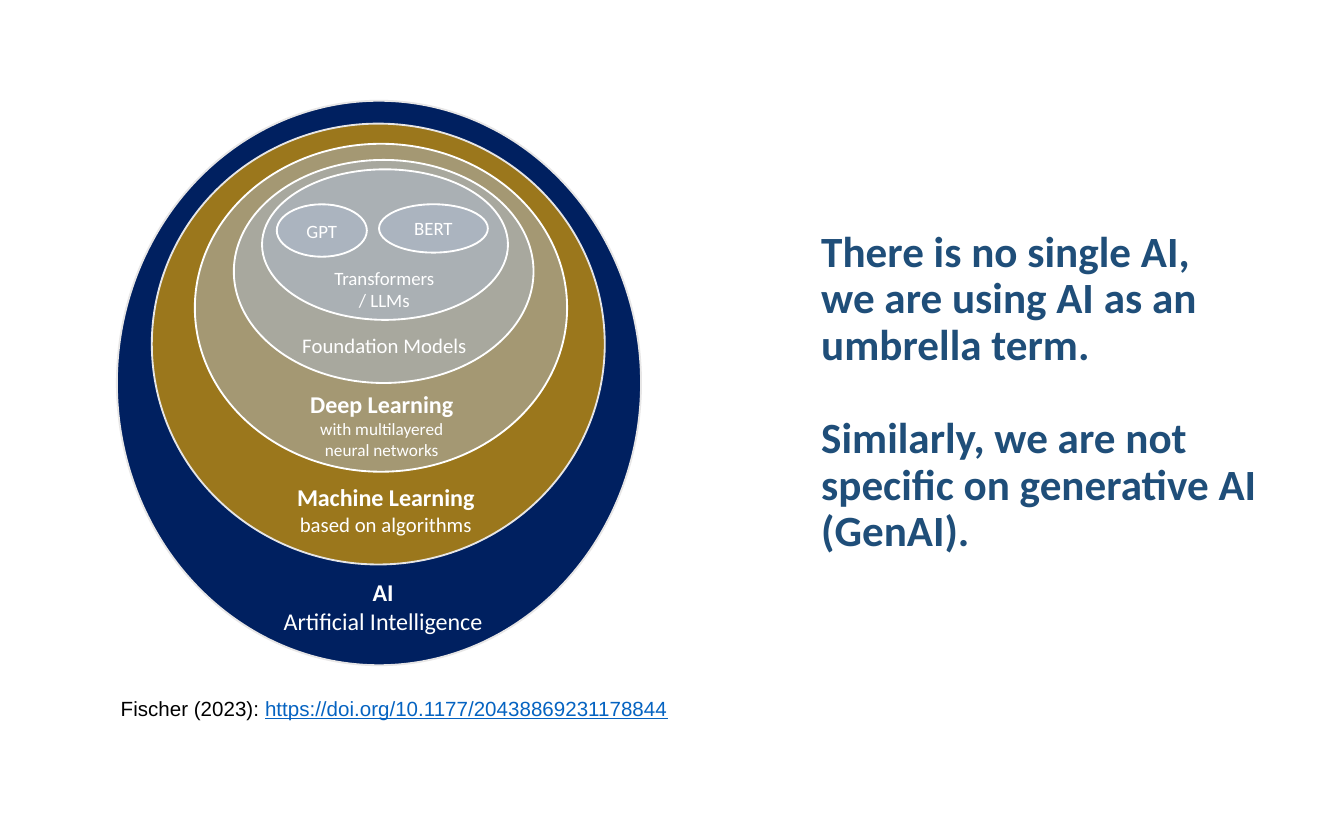
from lxml.etree import SubElement
from pptx import Presentation
from pptx.dml.color import RGBColor
from pptx.enum.shapes import MSO_SHAPE
from pptx.enum.text import MSO_ANCHOR, MSO_AUTO_SIZE, PP_ALIGN
from pptx.oxml.ns import qn
from pptx.util import Emu, Pt

PX = 9144  # 100 px to the inch
COLORS = {
    "navy": "002060", "gold": "DD9D00", "mist": "ADB9CA", "white": "FFFFFF",
    "pale": "E7E6E6", "heading": "1F4E79", "black": "000000", "link": "0563C1",
}

# left, top, width, height, fill, opacity in percent, line, text
ELLIPSES = [
    (0, 0, 390, 420, "navy", 100, "pale", ""),
    (26, 17, 337, 328, "gold", 70, "pale", ""),
    (58, 32, 277, 244, "mist", 50, "white", ""),
    (87, 44, 223, 166, "mist", 50, "white", ""),
    (108, 51, 183, 112, "mist", 50, "white", ""),
    (119, 77, 67, 39, "mist", 50, "white", "GPT"),
    (195, 77, 81, 36, "mist", 50, "white", "BERT"),
]

# left, top, height, lines of (text, size, bold)
LABEL_WIDTH = 180
LABELS = [
    (108, 355, 42, [("AI", 12.9, True), ("Artificial Intelligence", 12.9, False)]),
    (110, 284, 40, [("Machine Learning", 12.9, True), ("based on algorithms", 11.1, False)]),
    (107, 215, 52, [("Deep Learning", 12.9, True), ("with multilayered", 9.2, False),
                    ("neural networks", 9.2, False)]),
    (109, 172, 20, [("Foundation Models", 11.1, False)]),
    (109, 123, 34, [("Transformers", 10.1, False), ("/ LLMs", 10.1, False)]),
]


def px(*lengths):
    return [Emu(length * PX) for length in lengths]


def color(name):
    return RGBColor.from_string(COLORS[name])


def add_run(paragraph, text, size, color_name, bold=False, font="Calibri"):
    run = paragraph.add_run()
    run.text = text
    run.font.name, run.font.size, run.font.bold = font, Pt(size), bold
    run.font.color.rgb = color(color_name)
    return run


def write_centred(frame, lines):
    """Fill a text frame with centred white lines and no insets."""
    frame.word_wrap = False
    frame.vertical_anchor = MSO_ANCHOR.MIDDLE
    frame.margin_left = frame.margin_right = frame.margin_top = frame.margin_bottom = 0
    for index, (text, size, bold) in enumerate(lines):
        paragraph = frame.add_paragraph() if index else frame.paragraphs[0]
        paragraph.alignment = PP_ALIGN.CENTER
        add_run(paragraph, text, size, "white", bold)


def add_ellipse(slide, box, fill, opacity, line, text):
    shape = slide.shapes.add_shape(MSO_SHAPE.OVAL, *px(*box))
    shape.shadow.inherit = False
    shape.fill.solid()
    shape.fill.fore_color.rgb = color(fill)
    if opacity < 100:
        fill_color = shape.fill._xPr.find(qn("a:solidFill"))[0]
        SubElement(fill_color, qn("a:alpha"), val=str(opacity * 1000))
    shape.line.color.rgb = color(line)
    shape.line.width = Pt(1)
    if text:
        write_centred(shape.text_frame, [(text, 10.1, False)])


def add_nested_diagram(slide, left, top):
    for x, y, width, height, *style in ELLIPSES:
        add_ellipse(slide, (left + x, top + y, width, height), *style)
    for x, y, height, lines in LABELS:
        label = slide.shapes.add_textbox(*px(left + x, top + y, LABEL_WIDTH, height))
        write_centred(label.text_frame, lines)


def place_title(slide, box):
    title = slide.shapes.title
    title.left, title.top, title.width, title.height = px(*box)
    frame = title.text_frame
    frame.word_wrap = True
    frame.auto_size = MSO_AUTO_SIZE.NONE
    frame.vertical_anchor = MSO_ANCHOR.MIDDLE
    statements = [
        ["There is no single AI,", "we are using AI as an umbrella term."],
        ["Similarly, we are not specific on generative AI (GenAI)."],
    ]
    for index, lines in enumerate(statements):
        paragraph = frame.add_paragraph() if index else frame.paragraphs[0]
        paragraph.alignment = PP_ALIGN.LEFT
        paragraph.line_spacing = 0.9
        paragraph.space_before = Pt(25 * index)
        for number, line in enumerate(lines):
            if number:
                paragraph.add_line_break()
            add_run(paragraph, line, 23.1, "heading", True)


def add_citation(slide, box):
    frame = slide.shapes.add_textbox(*px(*box)).text_frame
    frame.word_wrap = True
    frame.margin_right = 0
    paragraph = frame.paragraphs[0]
    add_run(paragraph, "Fischer (2023): ", 11, "black", font="Arial")
    address = add_run(paragraph, "https://doi.org/10.1177/20438869231178844",
                      11, "link", font="Arial")
    address.font.underline = True


def main():
    presentation = Presentation()
    presentation.slide_width, presentation.slide_height = px(1000, 625)
    slide = presentation.slides.add_slide(presentation.slide_layouts[5])
    place_title(slide, (601, 247, 363, 91))
    add_citation(slide, (80, 513, 428, 47))
    add_nested_diagram(slide, 87, 75)
    presentation.save("out.pptx")


if __name__ == "__main__":
    main()
